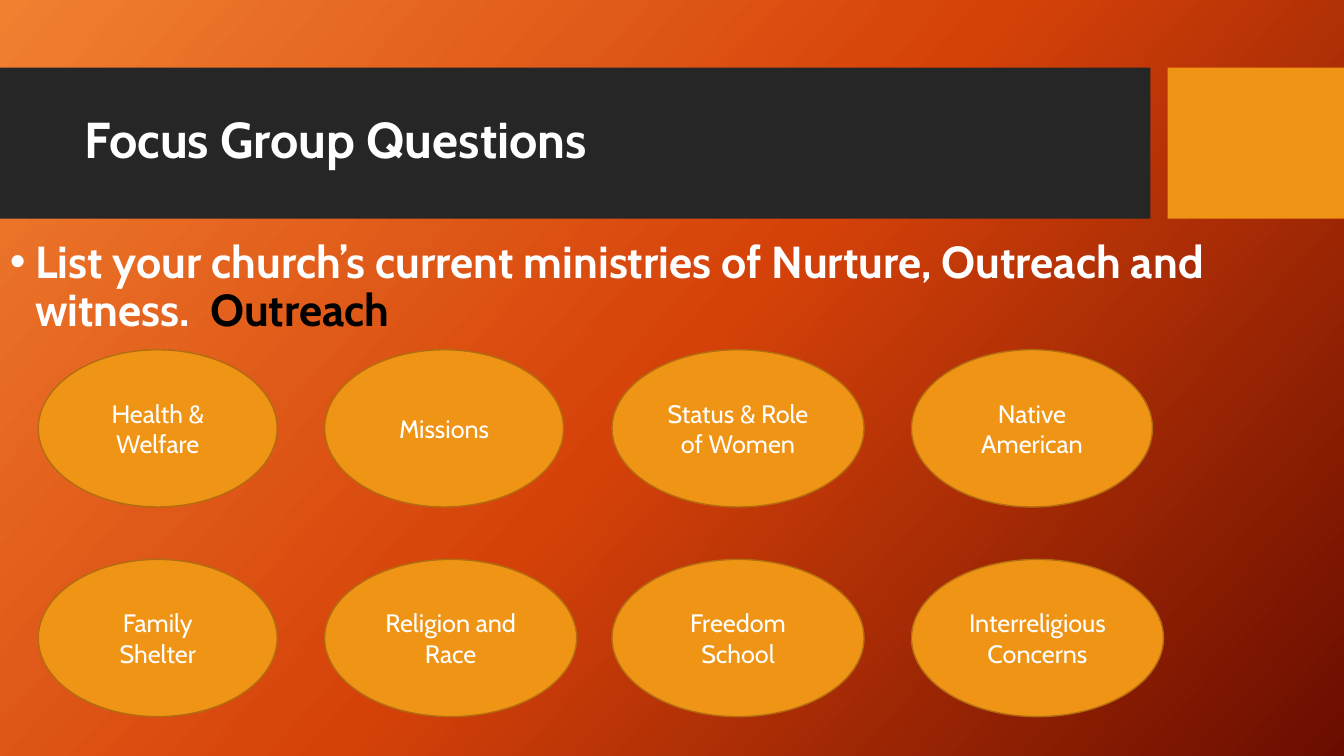
import copy

import pptx
import pptx.dml.color
import pptx.enum.shapes
import pptx.enum.text
import pptx.oxml
import pptx.oxml.ns
import pptx.util

RGBColor = pptx.dml.color.RGBColor
WHITE = RGBColor(0xFF, 0xFF, 0xFF)
BLACK = RGBColor(0x00, 0x00, 0x00)
CHARCOAL = RGBColor(0x26, 0x26, 0x26)
AMBER = RGBColor(0xF0, 0x94, 0x15)
BRONZE = RGBColor(0xB2, 0x6D, 0x10)
GLOW = (
    (0, RGBColor(0xF1, 0x80, 0x31)),
    (0.5, RGBColor(0xD5, 0x42, 0x09)),
    (1, RGBColor(0x6A, 0x0D, 0x00)),
)

FONT = "Cabin"
SLIDE_WIDTH, SLIDE_HEIGHT = 13.33, 7.5
BAND_TOP, BAND_HEIGHT = 0.67, 1.5
COLUMN_LEFTS = (0.38, 3.22, 6.07, 9.04)
FIRST_ROW, ROW_PITCH, OVAL_HEIGHT = 3.47, 2.08, 1.56
MINISTRIES = (
    (("Health & Welfare", 2.37), ("Missions", 2.37),
     ("Status & Role of Women", 2.5), ("Native American", 2.39)),
    (("Family Shelter", 2.37), ("Religion and Race", 2.5),
     ("Freedom School", 2.5), ("Interreligious Concerns", 2.5)),
)

SHAPES = pptx.enum.shapes.MSO_SHAPE
ALIGN = pptx.enum.text.PP_ALIGN
ANCHOR = pptx.enum.text.MSO_ANCHOR


def inches(*lengths):
    return [pptx.util.Inches(length) for length in lengths]


def paint_background(slide):
    fill = slide.background.fill
    fill.gradient()
    fill.gradient_angle = 360 - 42
    stop_list = slide.element.find(".//" + pptx.oxml.ns.qn("a:gsLst"))
    stop_list.append(copy.deepcopy(stop_list[-1]))
    for stop, (position, color) in zip(fill.gradient_stops, GLOW):
        stop.position = position
        stop.color.rgb = color


def add_bullet(paragraph):
    properties = paragraph._p.get_or_add_pPr()
    properties.set("marL", str(pptx.util.Inches(0.25)))
    properties.set("indent", str(pptx.util.Inches(-0.25)))
    for tag, name, value in (("buFont", "typeface", "Arial"), ("buChar", "char", "•")):
        mark = pptx.oxml.parse_xml(f"<a:{tag} {pptx.oxml.ns.nsdecls('a')}/>")
        mark.set(name, value)
        properties.append(mark)


def write(shape, *runs, size, bold=False, align=ALIGN.LEFT,
          anchor=ANCHOR.MIDDLE, spacing=None, bullet=False):
    frame = shape.text_frame
    frame.word_wrap = True
    frame.vertical_anchor = anchor
    paragraph = frame.paragraphs[0]
    paragraph.alignment = align
    paragraph.line_spacing = spacing
    if bullet:
        add_bullet(paragraph)
    for text, color in runs:
        run = paragraph.add_run()
        run.text = text
        run.font.name = FONT
        run.font.size = pptx.util.Pt(size)
        run.font.bold = bold
        run.font.color.rgb = color


def add_block(slide, kind, bounds, color, outline=None):
    block = slide.shapes.add_shape(kind, *inches(*bounds))
    block.shadow.inherit = False
    block.fill.solid()
    block.fill.fore_color.rgb = color
    if outline is None:
        block.line.fill.background()
    else:
        block.line.color.rgb = outline
        block.line.width = pptx.util.Pt(1)
    return block


def add_header(slide):
    add_block(slide, SHAPES.RECTANGLE, (0, BAND_TOP, 11.41, BAND_HEIGHT), CHARCOAL)
    add_block(slide, SHAPES.RECTANGLE,
              (11.58, BAND_TOP, SLIDE_WIDTH - 11.58, BAND_HEIGHT), AMBER)
    title = slide.shapes.add_textbox(*inches(0.74, 0.82, 10.51, 1.18))
    write(title, ("Focus Group Questions", WHITE), size=36, bold=True, spacing=0.9)


def add_question(slide):
    top = 2.33
    question = slide.shapes.add_textbox(*inches(0, top, 12.72, FIRST_ROW - top))
    write(question,
          ("List your church’s current ministries of Nurture, Outreach and witness.  ", WHITE),
          ("Outreach", BLACK),
          size=32, bold=True, anchor=ANCHOR.TOP, spacing=0.9, bullet=True)


def add_ministries(slide):
    for row, ministries in enumerate(MINISTRIES):
        top = FIRST_ROW + row * ROW_PITCH
        for left, (ministry, width) in zip(COLUMN_LEFTS, ministries):
            oval = add_block(slide, SHAPES.OVAL, (left, top, width, OVAL_HEIGHT),
                             AMBER, outline=BRONZE)
            write(oval, (ministry, WHITE), size=18, align=ALIGN.CENTER)


def main():
    deck = pptx.Presentation()
    deck.slide_width, deck.slide_height = inches(SLIDE_WIDTH, SLIDE_HEIGHT)
    slide = deck.slides.add_slide(deck.slide_layouts[6])
    paint_background(slide)
    add_header(slide)
    add_question(slide)
    add_ministries(slide)
    deck.save("out.pptx")


if __name__ == "__main__":
    main()
